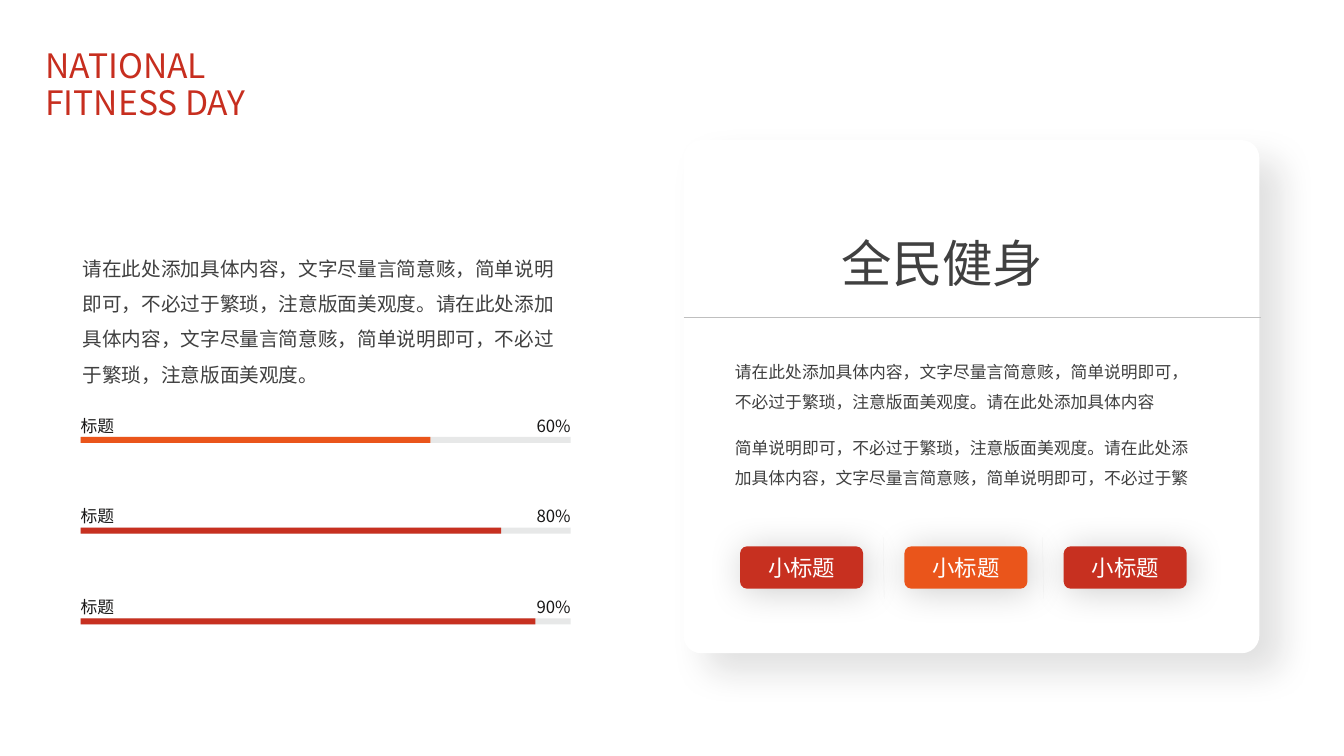
from lxml.etree import SubElement
from pptx import Presentation
from pptx.dml.color import RGBColor
from pptx.enum.shapes import MSO_CONNECTOR, MSO_SHAPE as Shape
from pptx.enum.text import MSO_ANCHOR as Anchor, MSO_AUTO_SIZE as AutoSize, PP_ALIGN as Align
from pptx.oxml.ns import qn
from pptx.util import Inches, Pt

FONT = "Noto Sans CJK SC"
TITLE_RED = RGBColor(0xC7, 0x2E, 0x1F)
RED = RGBColor(0xC7, 0x30, 0x20)
ORANGE = RGBColor(0xEA, 0x55, 0x1B)
TRACK = RGBColor(0x1C, 0x1F, 0x25)
INK = RGBColor(0x18, 0x17, 0x17)
BLACK = RGBColor(0x00, 0x00, 0x00)
GREY = RGBColor(0x40, 0x40, 0x40)
RULE = RGBColor(0xBF, 0xBF, 0xBF)
SEPARATOR = RGBColor(0xF2, 0xF2, 0xF2)
WHITE = RGBColor(0xFF, 0xFF, 0xFF)

SENTENCE = "请在此处添加具体内容，文字尽量言简意赅，简单说明即可，不必过于繁琐，注意版面美观度。"
CARD_NOTES = (
    SENTENCE + "请在此处添加具体内容",
    "简单说明即可，不必过于繁琐，注意版面美观度。请在此处添加具体内容，文字尽量言简意赅，简单说明即可，不必过于繁",
)
PROGRESS = ((0.6, 3.47, ORANGE), (0.8, 4.17, RED), (0.9, 4.51, RED))
BUTTONS = ((7.34, RED), (8.97, ORANGE), (10.55, RED))
BUTTON_SHADOW = (BLACK, 20, 26, 3, 45)


def write(frame, text, size, color, align=Align.LEFT, spacing=1.0):
    """Fill a text frame with one formatted paragraph."""
    frame.text = text
    paragraph = frame.paragraphs[0]
    paragraph.alignment = align
    paragraph.line_spacing = spacing
    font = paragraph.font
    font.size = Pt(size)
    font.name = FONT
    font.color.rgb = color
    defaults = paragraph._p.pPr.find(qn("a:defRPr"))
    SubElement(defaults, qn("a:ea"), typeface=FONT)


def add_alpha(parent, percent):
    """Set the opacity of the colour inside a fill or line element."""
    color = next(parent.iter(qn("a:srgbClr")))
    SubElement(color, qn("a:alpha"), val=str(percent * 1000))


def add_shadow(effects, color, alpha, blur, distance, angle):
    """Put an outer shadow into an effect list."""
    shadow = SubElement(
        effects, qn("a:outerShdw"), blurRad=str(Pt(blur)), dist=str(Pt(distance)),
        dir=str(angle * 60000), algn="tl", rotWithShape="0")
    SubElement(shadow, qn("a:srgbClr"), val=str(color))
    add_alpha(shadow, alpha)


def add_block(slide, kind, box, color, alpha=None, shadow=None):
    """Add a borderless filled shape."""
    block = slide.shapes.add_shape(kind, *map(Inches, box))
    block.fill.solid()
    block.fill.fore_color.rgb = color
    block.line.fill.background()
    block.shadow.inherit = False
    properties = block._element.spPr
    if alpha:
        add_alpha(properties, alpha)
    if shadow:
        add_shadow(properties.find(qn("a:effectLst")), *shadow)
    return block


def add_line(slide, start, end, color, alpha=None, shadow=None):
    """Add a hairline between two points."""
    line = slide.shapes.add_connector(
        MSO_CONNECTOR.STRAIGHT, *map(Inches, (*start, *end)))
    line.line.color.rgb = color
    line.line.width = Pt(0.25)
    properties = line._element.spPr
    effects = SubElement(properties, qn("a:effectLst"))
    if alpha:
        add_alpha(properties, alpha)
    if shadow:
        add_shadow(effects, *shadow)


def add_text(slide, box, text, size, color, align=Align.LEFT, spacing=1.5, label=False):
    """Add a text box, unwrapped and without insets for a label."""
    textbox = slide.shapes.add_textbox(*map(Inches, box))
    frame = textbox.text_frame
    frame.word_wrap = not label
    frame.auto_size = AutoSize.SHAPE_TO_FIT_TEXT
    if label:
        frame.margin_left = frame.margin_right = frame.margin_top = frame.margin_bottom = 0
    write(frame, text, size, color, align, spacing)


def add_title(slide):
    """Place and format the title placeholder."""
    title = slide.shapes.title
    title.left, title.top, title.width, title.height = map(Inches, (0.35, 0.31, 2.27, 1.09))
    frame = title.text_frame
    frame.word_wrap = True
    frame.auto_size = AutoSize.NONE
    frame.vertical_anchor = Anchor.MIDDLE
    write(frame, "NATIONAL FITNESS DAY", 24, TITLE_RED, spacing=0.9)


def add_progress(slide, top, share, width, color):
    """Add a labelled progress bar."""
    bar_top = top + 0.315
    add_block(slide, Shape.RECTANGLE, (0.8, bar_top, 4.86, 0.06), TRACK, alpha=10)
    add_block(slide, Shape.RECTANGLE, (0.8, bar_top, width, 0.06), color)
    add_text(slide, (0.8, top, 0.34, 0.27), "标题", 12, INK, label=True)
    add_text(slide, (5.31, top, 0.35, 0.27), f"{share:.0%}", 12, INK, Align.RIGHT, label=True)


def add_button(slide, left, color):
    """Add a rounded button with a soft shadow."""
    button = add_block(slide, Shape.ROUNDED_RECTANGLE, (left, 5.42, 1.22, 0.42),
                       color, shadow=BUTTON_SHADOW)
    button.text_frame.vertical_anchor = Anchor.MIDDLE
    write(button.text_frame, "小标题", 16, WHITE, Align.CENTER)


def add_card(slide):
    """Add the card with its heading, notes and buttons."""
    card = add_block(slide, Shape.ROUNDED_RECTANGLE, (6.78, 1.39, 5.71, 5.09),
                     WHITE, shadow=(INK, 12, 25, 21, 42))
    card.adjustments[0] = 0.034
    add_line(slide, (6.78, 3.15), (12.51, 3.15), RULE)
    for x, shadow in ((8.77, None), (10.35, BUTTON_SHADOW)):
        add_line(slide, (x, 5.94), (x - 0.01, 5.33), SEPARATOR, 70, shadow)
    for left, color in BUTTONS:
        add_button(slide, left, color)
    for row, note in enumerate(CARD_NOTES):
        add_text(slide, (7.19, 3.44 + 0.75 * row, 4.75, 0.67), note, 12, GREY)
    add_text(slide, (8.25, 2.25, 2.64, 0.71), "全民健身", 36, GREY, Align.JUSTIFY, 1.0)


def main():
    """Build and save the slide."""
    deck = Presentation()
    deck.slide_width, deck.slide_height = Inches(13.33), Inches(7.5)
    slide = deck.slides.add_slide(deck.slide_layouts[5])
    add_title(slide)
    for row, (share, width, color) in enumerate(PROGRESS):
        add_progress(slide, 4.02 + 0.9 * row, share, width, color)
    add_text(slide, (0.72, 2.38, 4.95, 1.51), SENTENCE * 2, 14, GREY)
    add_card(slide)
    deck.save("out.pptx")


if __name__ == "__main__":
    main()
